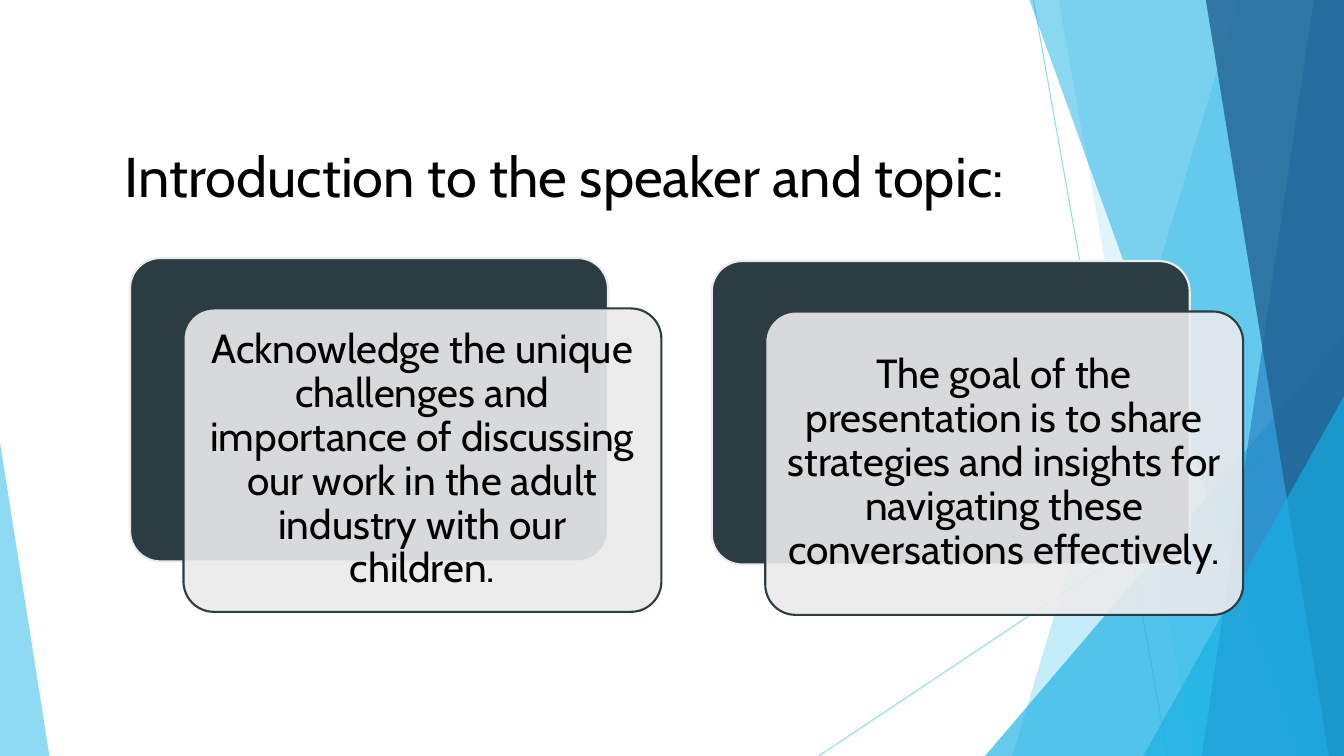
from lxml.etree import SubElement
from pptx import Presentation
from pptx.dml.color import RGBColor
from pptx.enum.shapes import MSO_CONNECTOR, MSO_SHAPE
from pptx.enum.text import MSO_ANCHOR, PP_ALIGN
from pptx.oxml.ns import qn
from pptx.util import Inches, Pt

# Content
TITLE = "Introduction to the speaker and topic:"
CARDS = [
    "Acknowledge the unique challenges and importance of discussing our work "
    "in the adult industry with our children.",
    "The goal of the presentation is to share strategies and insights for "
    "navigating these conversations effectively.",
]

# Style
FONT = "Cabin"
BLACK = RGBColor(0x00, 0x00, 0x00)
SLATE = RGBColor(0x2C, 0x3C, 0x43)
MIST = RGBColor(0xEB, 0xEB, 0xEB)
SKY = RGBColor(0x5F, 0xCB, 0xEF)
CYAN = RGBColor(0x17, 0xB0, 0xE4)
BLUE = RGBColor(0x2E, 0x83, 0xC3)
NAVY = RGBColor(0x22, 0x62, 0x92)

# Geometry in inches
WIDTH, HEIGHT = 13.33, 7.5
RAYS = [((10.25, 0), (11.58, HEIGHT)), ((WIDTH, 4.03), (8.12, HEIGHT))]
# Bands reach the right edge: (top x, bottom x, colour, opacity %)
# Wedges stand on the bottom edge: (left, width, height, apex, colour, opacity %)
FACETS = [
    (12.28, 10.04, SKY, 36),
    (10.5, 11.83, SKY, 20),
    (9.77, 3.56, 4.17, 1, CYAN, 66),
    (10.21, 12.91, CYAN, 50),
    (13.03, 11.92, BLUE, 70),
    (11.96, 13.18, NAVY, 80),
    (11.34, 1.99, 3.57, 1, CYAN, 66),
    (0, 0.49, 3.11, 0, SKY, 70),
]
CARD_SIZE = (4.74, 3.01)
CARD_START, CARD_STEP = (1.29, 2.56), (5.77, 0.03)
FRONT_SHIFT = (0.53, 0.5)


def set_opacity(fill_owner, percent):
    for color in fill_owner.iter(qn("a:srgbClr")):
        SubElement(color, qn("a:alpha"), val=str(percent * 1000))


def paint(shape, color, opacity=100, outline=None):
    shape.shadow.inherit = False
    shape.fill.solid()
    shape.fill.fore_color.rgb = color
    if opacity < 100:
        set_opacity(shape.fill._xPr.find(qn("a:solidFill")), opacity)
    if outline is None:
        shape.line.fill.background()
    else:
        shape.line.color.rgb = outline
        shape.line.width = Pt(1.5)


def write(shape, text, size, align):
    frame = shape.text_frame
    frame.word_wrap = True
    frame.vertical_anchor = MSO_ANCHOR.MIDDLE
    para = frame.paragraphs[0]
    para.text = text
    para.alignment = align
    para.font.name = FONT
    para.font.size = Pt(size)
    para.font.color.rgb = BLACK
    return frame


def add_ray(page, start, end):
    ray = page.shapes.add_connector(
        MSO_CONNECTOR.STRAIGHT, *map(Inches, start + end))
    ray.line.color.rgb = SKY
    ray.line.width = Pt(0.75)
    properties = ray._element.spPr
    set_opacity(properties, 70)
    SubElement(properties, qn("a:effectLst"))


def add_band(page, top_x, bottom_x, color, opacity):
    corners = [(WIDTH, 0), (WIDTH, HEIGHT), (bottom_x, HEIGHT)]
    builder = page.shapes.build_freeform(Inches(top_x), 0)
    builder.add_line_segments([(Inches(x), Inches(y)) for x, y in corners])
    paint(builder.convert_to_shape(), color, opacity)


def add_wedge(page, left, width, height, apex, color, opacity):
    wedge = page.shapes.add_shape(
        MSO_SHAPE.ISOSCELES_TRIANGLE,
        *map(Inches, (left, HEIGHT - height, width, height)))
    wedge.adjustments[0] = apex
    paint(wedge, color, opacity)


def add_panel(page, left, top, color, opacity, outline):
    panel = page.shapes.add_shape(
        MSO_SHAPE.ROUNDED_RECTANGLE, *map(Inches, (left, top) + CARD_SIZE))
    panel.adjustments[0] = 0.1
    paint(panel, color, opacity, outline)
    return panel


def main():
    deck = Presentation()
    deck.slide_width, deck.slide_height = Inches(WIDTH), Inches(HEIGHT)
    page = deck.slides.add_slide(deck.slide_layouts[6])

    # Faceted backdrop
    for start, end in RAYS:
        add_ray(page, start, end)
    for facet in FACETS:
        add_facet = add_band if len(facet) == 4 else add_wedge
        add_facet(page, *facet)

    # Title
    box = page.shapes.add_textbox(*map(Inches, (1.14, 0.89, 11.13, 1.7)))
    write(box, TITLE, 40, PP_ALIGN.LEFT)

    # Cards: a dark panel behind a pale one that holds the text
    for index, text in enumerate(CARDS):
        left, top = (start + index * step
                     for start, step in zip(CARD_START, CARD_STEP))
        add_panel(page, left, top, SLATE, 100, MIST)
        front = add_panel(page, left + FRONT_SHIFT[0], top + FRONT_SHIFT[1],
                          MIST, 90, SLATE)
        frame = write(front, text, 29, PP_ALIGN.CENTER)
        frame.paragraphs[0].line_spacing = 0.9
        frame.margin_left = frame.margin_right = Inches(0.12)
        frame.margin_top = frame.margin_bottom = Inches(0.12)

    deck.save("out.pptx")


if __name__ == "__main__":
    main()
